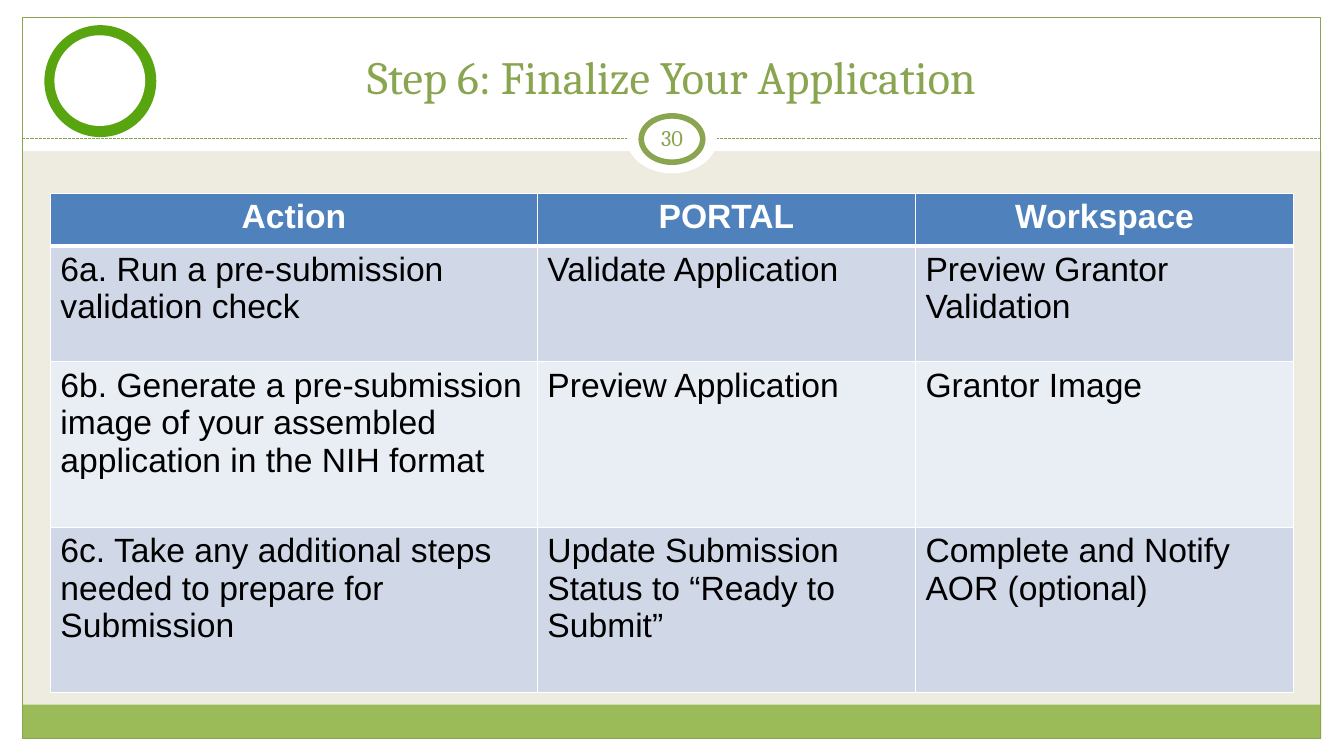
import pptx
import pptx.util
import pptx.dml.color
import pptx.enum.dml
import pptx.enum.shapes
import pptx.enum.text
import pptx.oxml
import pptx.oxml.ns

THEME = {
    "paper": "EEECE1", "white": "FFFFFF", "black": "000000",
    "olive": "89A54F", "footer": "9BBB59", "ring": "59A50F",
    "header": "4F81BD", "bands": ["D0D8E8", "E9EDF4"],
    "heading_font": "Cambria", "body_font": "Arial",
    "title_size": 33, "number_size": 16, "table_size": 24,
}
PX = 9144  # 100 px to the inch
RGB = pptx.dml.color.RGBColor.from_string
Pt = pptx.util.Pt
SHAPE = pptx.enum.shapes.MSO_SHAPE
ALIGN = pptx.enum.text.PP_ALIGN
ANCHOR = pptx.enum.text.MSO_ANCHOR


def add_shape(kind, box, fill=None, line=None, width=0.75):
    sp = s.shapes.add_shape(kind, *[v * PX for v in box])
    sp.shadow.inherit = False
    if fill:
        sp.fill.solid()
        sp.fill.fore_color.rgb = RGB(fill)
    else:
        sp.fill.background()
    if line:
        sp.line.color.rgb = RGB(line)
        sp.line.width = Pt(width)
    else:
        sp.line.fill.background()


def format_text(p, font, size, color, bold=False, align=ALIGN.LEFT):
    p.alignment = align
    for r in p.runs:
        r.font.name = font
        r.font.size = Pt(size)
        r.font.bold = bold
        r.font.color.rgb = RGB(color)


prs = pptx.Presentation()
prs.slide_width, prs.slide_height = 1333 * PX, 750 * PX
s = prs.slides.add_slide(prs.slide_layouts[5])
s.background.fill.solid()
s.background.fill.fore_color.rgb = RGB(THEME["paper"])

# White margins, footer band and frame
for box in [(0, 733, 1333, 17), (0, 0, 1333, 150), (0, 0, 22, 750), (1311, 0, 22, 750)]:
    add_shape(SHAPE.RECTANGLE, box, THEME["white"])
add_shape(SHAPE.RECTANGLE, (22, 699, 1288, 34), THEME["footer"])
add_shape(SHAPE.RECTANGLE, (22, 17, 1288, 716), line=THEME["olive"])

# Dashed rule under the title
rule = s.shapes.add_connector(pptx.enum.shapes.MSO_CONNECTOR.STRAIGHT,
                              22 * PX, 137 * PX, 1310 * PX, 137 * PX)
rule.line.color.rgb = RGB(THEME["olive"])
rule.line.width = Pt(0.75)
rule.line.dash_style = pptx.enum.dml.MSO_LINE.SQUARE_DOT
rule._element.spPr.append(pptx.oxml.parse_xml(
    f'<a:effectLst {pptx.oxml.ns.nsdecls("a")}/>'))

# Page number badge
add_shape(SHAPE.OVAL, (622, 105, 89, 67), THEME["white"])
add_shape(SHAPE.OVAL, (636, 115, 61, 46), THEME["white"], THEME["olive"], 4)
number = s.shapes.add_textbox(633 * PX, 112 * PX, 67 * PX, 48 * PX)
tf = number.text_frame
tf.word_wrap = True
tf.vertical_anchor = ANCHOR.MIDDLE
tf.margin_left = tf.margin_right = tf.margin_top = tf.margin_bottom = 5 * PX
tf.text = "30"
format_text(tf.paragraphs[0], THEME["heading_font"], THEME["number_size"],
            THEME["olive"], align=ALIGN.CENTER)

# Title, raised above the white band
title = s.shapes.title
s.shapes._spTree.append(title._element)
title.left, title.top, title.width, title.height = [v * PX for v in (44, 25, 1244, 83)]
tf = title.text_frame
tf.text = "Step 6: Finalize Your Application"
tf.vertical_anchor = ANCHOR.BOTTOM
tf.auto_size = pptx.enum.text.MSO_AUTO_SIZE.NONE
format_text(tf.paragraphs[0], THEME["heading_font"], THEME["title_size"],
            THEME["olive"], align=ALIGN.CENTER)

# Green ring
add_shape(SHAPE.OVAL, (44, 25, 111, 111), THEME["ring"])
add_shape(SHAPE.OVAL, (54, 35, 90, 90), THEME["white"])

# Table of actions
rows = [
    ["Action", "PORTAL", "Workspace"],
    ["6a. Run a pre-submission validation check",
     "Validate Application", "Preview Grantor Validation"],
    ["6b. Generate a pre-submission image of your assembled application in the NIH format",
     "Preview Application", "Grantor Image"],
    ["6c. Take any additional steps needed to prepare for Submission",
     "Update Submission Status to “Ready to Submit”", "Complete and Notify AOR (optional)"],
]
table = s.shapes.add_table(4, 3, 50 * PX, 192 * PX, 1233 * PX, 495 * PX).table
for column, width in zip(table.columns, [483, 375, 375]):
    column.width = width * PX
for row, height in zip(table.rows, [52, 115, 164, 164]):
    row.height = height * PX
for i, texts in enumerate(rows):
    head = i == 0
    for j, text in enumerate(texts):
        cell = table.cell(i, j)
        cell.text = text
        cell.fill.solid()
        cell.fill.fore_color.rgb = RGB(THEME["header"] if head else THEME["bands"][(i - 1) % 2])
        format_text(cell.text_frame.paragraphs[0], THEME["body_font"], THEME["table_size"],
                    THEME["white"] if head else THEME["black"], head,
                    ALIGN.CENTER if head else ALIGN.LEFT)
        # Borders, heavier between the header and the first row
        tcPr = cell._tc.get_or_add_tcPr()
        for k, side in enumerate("LRTB"):
            heavy = (i, side) in [(0, "B"), (1, "T")]
            tcPr.insert(k, pptx.oxml.parse_xml(
                f'<a:ln{side} {pptx.oxml.ns.nsdecls("a")} w="{Pt(3 if heavy else 1)}">'
                f'<a:solidFill><a:srgbClr val="{THEME["white"]}"/></a:solidFill></a:ln{side}>'))

prs.save("out.pptx")
